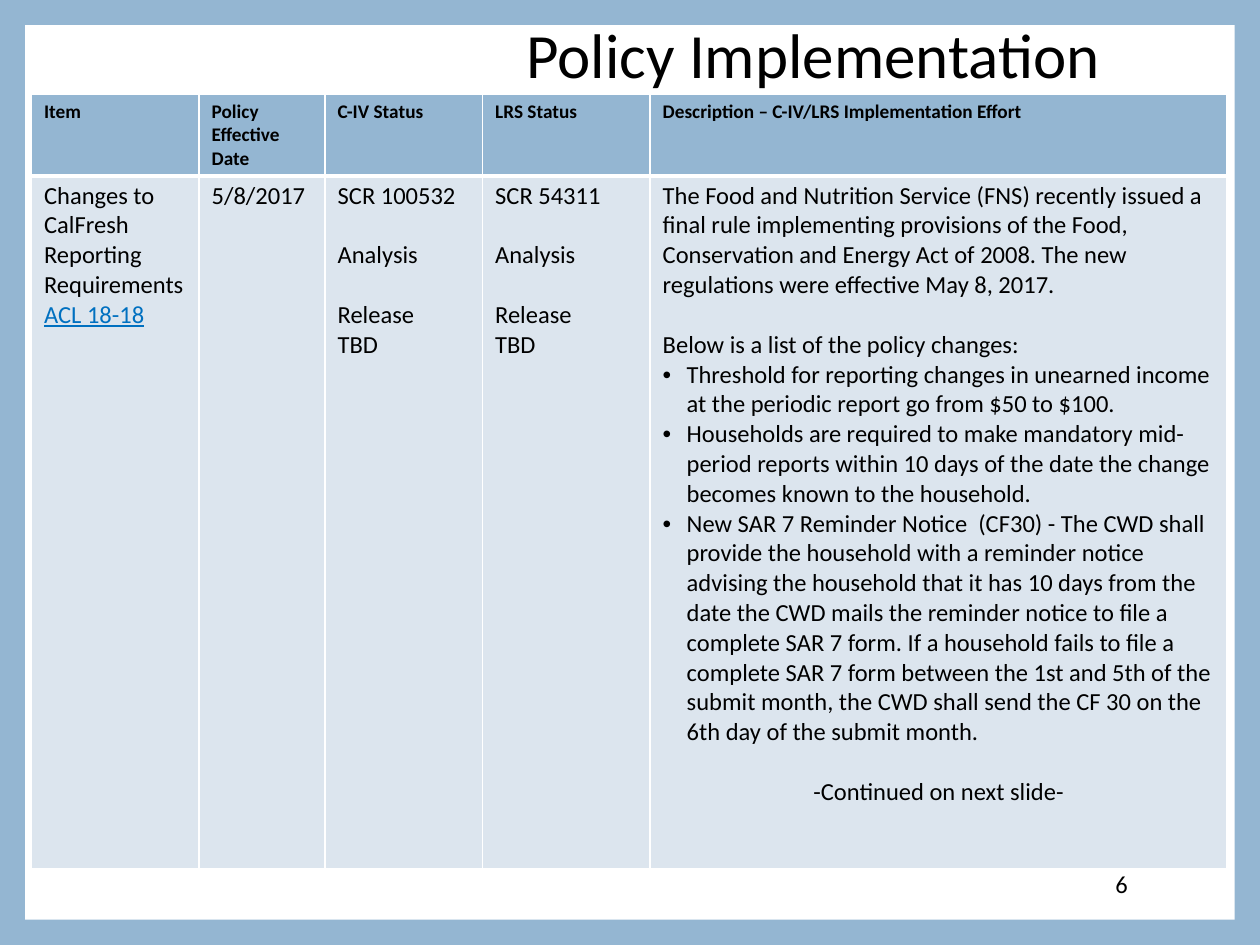
from dataclasses import dataclass

from lxml import etree
from pptx import Presentation
from pptx import util as u
from pptx.dml.color import RGBColor
from pptx.enum import shapes, text
from pptx.oxml.ns import qn


@dataclass(frozen=True)
class Theme:
    font: str = "Calibri"
    frame: str = "94B6D2"
    paper: str = "FFFFFF"
    body_fill: str = "DCE5EE"
    ink: str = "000000"
    link: str = "0070C0"
    title_size: int = 36
    header_size: int = 11
    body_size: int = 14
    blank_line: int = 17
    bullet_indent: float = 0.19
    rule: int = 1
    header_rule: int = 3


THEME = Theme()
WIDTH, HEIGHT = 10, 7.5
MARGIN = 0.2
COLUMNS = [1.33, 1, 1.25, 1.33, 4.58]
ROWS = [0.63, 5.5]

HEADERS = ["Item", "Policy Effective Date", "C-IV Status", "LRS Status",
           "Description – C-IV/LRS Implementation Effort"]


def status(request):
    return [(request, {}), ("Analysis", {"gap": True}),
            ("Release", {"gap": True}), ("TBD", {})]


# Each body cell is a list of (wording, options) paragraphs.
POLICY = [
    [("Changes to CalFresh Reporting Requirements", {}),
     ("ACL 18-18", {"link": True})],
    [("5/8/2017", {})],
    status("SCR 100532"),
    status("SCR 54311"),
    [("The Food and Nutrition Service (FNS) recently issued a final rule "
      "implementing provisions of the Food, Conservation and Energy Act of "
      "2008. The new regulations were effective May 8, 2017.", {}),
     ("Below is a list of the policy changes:", {"gap": True}),
     ("Threshold for reporting changes in unearned income at the periodic "
      "report go from $50 to $100.", {"bullet": True}),
     ("Households are required to make mandatory mid-period reports within "
      "10 days of the date the change becomes known to the household.",
      {"bullet": True}),
     ("New SAR 7 Reminder Notice  (CF30) - The CWD shall provide the "
      "household with a reminder notice advising the household that it has "
      "10 days from the date the CWD mails the reminder notice to file a "
      "complete SAR 7 form. If a household fails to file a complete SAR 7 "
      "form between the 1st and 5th of the submit month, the CWD shall send "
      "the CF 30 on the 6th day of the submit month.", {"bullet": True}),
     ("-Continued on next slide-", {"gap": True, "center": True})],
]


def rgb(color):
    return RGBColor.from_string(color)


def apply(target, values):
    for name, value in values.items():
        setattr(target, name, value)


def write(paragraph, wording, size, color=THEME.ink, **font_values):
    run = paragraph.add_run()
    run.text = wording
    apply(run.font, {"name": THEME.font, "size": u.Pt(size), **font_values})
    run.font.color.rgb = rgb(color)


def add_bullet(paragraph):
    properties = paragraph._p.get_or_add_pPr()
    indent = u.Inches(THEME.bullet_indent)
    properties.set("marL", str(indent))
    properties.set("indent", str(-indent))
    etree.SubElement(properties, qn("a:buFont"), typeface="Arial")
    etree.SubElement(properties, qn("a:buChar"), char="•")


def add_border(cell, side, width):
    line = etree.SubElement(cell._tc.get_or_add_tcPr(), qn(f"a:ln{side}"),
                            w=str(u.Pt(width)))
    fill = etree.SubElement(line, qn("a:solidFill"))
    etree.SubElement(fill, qn("a:srgbClr"), val=THEME.paper)


def style_cell(cell, fill, top, bottom):
    widths = {"L": THEME.rule, "R": THEME.rule, "T": top, "B": bottom}
    for side, width in widths.items():
        add_border(cell, side, width)
    cell.fill.solid()
    cell.fill.fore_color.rgb = rgb(fill)
    apply(cell, {"margin_left": u.Inches(0.1), "margin_right": u.Inches(0.1),
                 "margin_top": u.Inches(0.04),
                 "margin_bottom": u.Inches(0.04)})


def fill_body_cell(cell, paragraphs):
    frame = cell.text_frame
    for index, (wording, options) in enumerate(paragraphs):
        paragraph = frame.add_paragraph() if index else frame.paragraphs[0]
        if options.get("gap"):
            paragraph.space_before = u.Pt(THEME.blank_line)
        if options.get("center"):
            paragraph.alignment = text.PP_ALIGN.CENTER
        if options.get("bullet"):
            add_bullet(paragraph)
        linked = options.get("link", False)
        write(paragraph, wording, THEME.body_size,
              THEME.link if linked else THEME.ink,
              bold=False, underline=linked)


def add_backdrop(slide):
    """Colour the slide as a frame around a white sheet."""
    slide.background.fill.solid()
    slide.background.fill.fore_color.rgb = rgb(THEME.frame)
    sheet = slide.shapes.add_shape(
        shapes.MSO_SHAPE.RECTANGLE, u.Inches(MARGIN), u.Inches(MARGIN),
        u.Inches(WIDTH - 2 * MARGIN), u.Inches(HEIGHT - 2 * MARGIN))
    sheet.shadow.inherit = False
    sheet.fill.solid()
    sheet.fill.fore_color.rgb = rgb(THEME.paper)
    sheet.line.fill.background()
    # Move the sheet behind the title placeholder.
    slide.shapes._spTree.insert(2, sheet._element)


def write_right_aligned(box, wording, size):
    frame = box.text_frame
    apply(frame, {"word_wrap": True, "auto_size": text.MSO_AUTO_SIZE.NONE,
                  "vertical_anchor": text.MSO_ANCHOR.MIDDLE})
    paragraph = frame.paragraphs[0]
    paragraph.alignment = text.PP_ALIGN.RIGHT
    write(paragraph, wording, size)
    return paragraph


def add_title(slide, wording):
    title = slide.shapes.title
    apply(title, {"left": u.Inches(0.5), "top": u.Inches(0.17),
                  "width": u.Inches(8.33), "height": u.Inches(0.58)})
    write_right_aligned(title, wording, THEME.title_size).line_spacing = 0.9


def add_page_number(slide, number):
    box = slide.shapes.add_textbox(u.Inches(7.65), u.Inches(6.81),
                                   u.Inches(1.4), u.Inches(0.4))
    write_right_aligned(box, number, THEME.body_size)


def add_policy_table(slide):
    table = slide.shapes.add_table(
        len(ROWS), len(COLUMNS), u.Inches(0.25), u.Inches(0.75),
        u.Inches(sum(COLUMNS)), u.Inches(sum(ROWS))).table
    table.horz_banding = False
    for column, width in zip(table.columns, COLUMNS):
        column.width = u.Inches(width)
    for row, height in zip(table.rows, ROWS):
        row.height = u.Inches(height)
    for index, (header, paragraphs) in enumerate(zip(HEADERS, POLICY)):
        head, body = table.cell(0, index), table.cell(1, index)
        style_cell(head, THEME.frame, THEME.rule, THEME.header_rule)
        write(head.text_frame.paragraphs[0], header, THEME.header_size,
              bold=True)
        style_cell(body, THEME.body_fill, THEME.header_rule, THEME.rule)
        fill_body_cell(body, paragraphs)


def main():
    deck = Presentation()
    apply(deck, {"slide_width": u.Inches(WIDTH),
                 "slide_height": u.Inches(HEIGHT)})
    slide = deck.slides.add_slide(deck.slide_layouts[5])
    add_backdrop(slide)
    add_title(slide, "Policy Implementation")
    add_page_number(slide, "6")
    add_policy_table(slide)
    deck.save("out.pptx")


if __name__ == "__main__":
    main()
